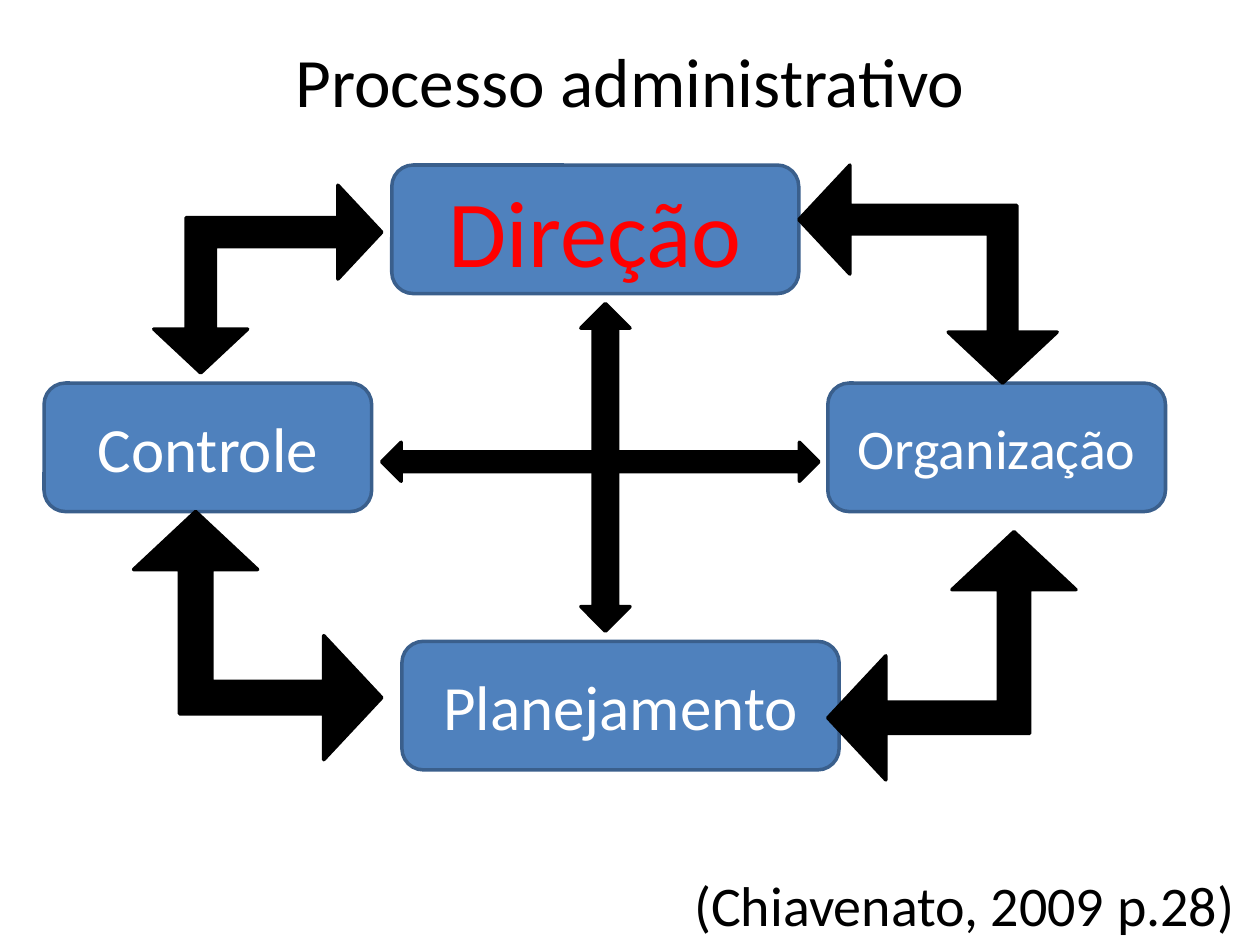
from pptx import Presentation
from pptx.dml.color import RGBColor
from pptx.enum.shapes import MSO_SHAPE
from pptx.enum.text import MSO_ANCHOR, PP_ALIGN
from pptx.util import Inches, Pt

ROUNDED = MSO_SHAPE.ROUNDED_RECTANGLE
VERTICAL = MSO_SHAPE.UP_DOWN_ARROW
HORIZONTAL = MSO_SHAPE.LEFT_RIGHT_ARROW
CORNER = MSO_SHAPE.LEFT_UP_ARROW
MIDDLE, TOP = MSO_ANCHOR.MIDDLE, MSO_ANCHOR.TOP
CENTER, RIGHT = PP_ALIGN.CENTER, PP_ALIGN.RIGHT

BLACK, WHITE, RED = "000000", "FFFFFF", "FF0000"
BLUE, DARK_BLUE = "4F81BD", "3A5F8C"

STAGES = [
    ("Direção", (3.11, 1.31, 3.23, 1.02), 54, RED),
    ("Organização", (6.57, 3.04, 2.68, 1.02), 32, WHITE),
    ("Controle", (0.35, 3.04, 2.6, 1.02), 36, WHITE),
    ("Planejamento", (3.19, 5.09, 3.47, 1.02), 36, WHITE),
]
CROSS_ARROWS = [
    (VERTICAL, (4.61, 2.41, 0.39, 2.6)),
    (HORIZONTAL, (3.03, 3.51, 3.47, 0.31)),
]
CORNER_ARROWS = [
    ((1.22, 1.47, 1.81, 1.49), 180, 0.155),
    ((6.5, 1.15, 1.73, 2.05), 270, 0.13),
    ((6.57, 4.22, 1.97, 1.97), 0, 0.126),
    ((1.06, 4.06, 1.97, 1.97), 90, 0.13),
]


def color(value):
    return RGBColor.from_string(value)


def write(frame, wording, size, ink, align, anchor):
    frame.word_wrap = True
    frame.vertical_anchor = anchor
    paragraph = frame.paragraphs[0]
    paragraph.alignment = align
    run = paragraph.add_run()
    run.text = wording
    run.font.name = "Calibri"
    run.font.size = Pt(size)
    run.font.color.rgb = color(ink)


def add_label(slide, box, wording, size, align, anchor):
    label = slide.shapes.add_textbox(*map(Inches, box))
    write(label.text_frame, wording, size, BLACK, align, anchor)


def add_figure(slide, kind, box, fill, outline):
    figure = slide.shapes.add_shape(kind, *map(Inches, box))
    figure.shadow.inherit = False
    figure.fill.solid()
    figure.fill.fore_color.rgb = color(fill)
    figure.line.color.rgb = color(outline)
    figure.line.width = Pt(2)
    return figure


def add_stage(slide, box, wording, size, ink):
    stage = add_figure(slide, ROUNDED, box, BLUE, DARK_BLUE)
    write(stage.text_frame, wording, size, ink, CENTER, MIDDLE)


def add_corner_arrow(slide, box, rotation, thickness):
    arrow = add_figure(slide, CORNER, box, BLACK, BLACK)
    arrow.rotation = rotation
    for index, value in enumerate((thickness, 0.25, 0.234)):
        arrow.adjustments[index] = value


def add_process(slide):
    for wording, box, size, ink in STAGES:
        add_stage(slide, box, wording, size, ink)
    for kind, box in CROSS_ARROWS:
        add_figure(slide, kind, box, BLACK, BLACK)
    for box, rotation, thickness in CORNER_ARROWS:
        add_corner_arrow(slide, box, rotation, thickness)


def main():
    deck = Presentation()
    deck.slide_width, deck.slide_height = Inches(10), Inches(7.5)
    slide = deck.slides.add_slide(deck.slide_layouts[6])
    add_label(slide, (0.75, 0.28, 8.5, 0.71), "Processo administrativo", 39.6, CENTER, MIDDLE)
    add_label(slide, (4.88, 6.86, 5.12, 0.64), "(Chiavenato, 2009 p.28) ", 32, RIGHT, TOP)
    add_process(slide)
    deck.save("out.pptx")


if __name__ == "__main__":
    main()
